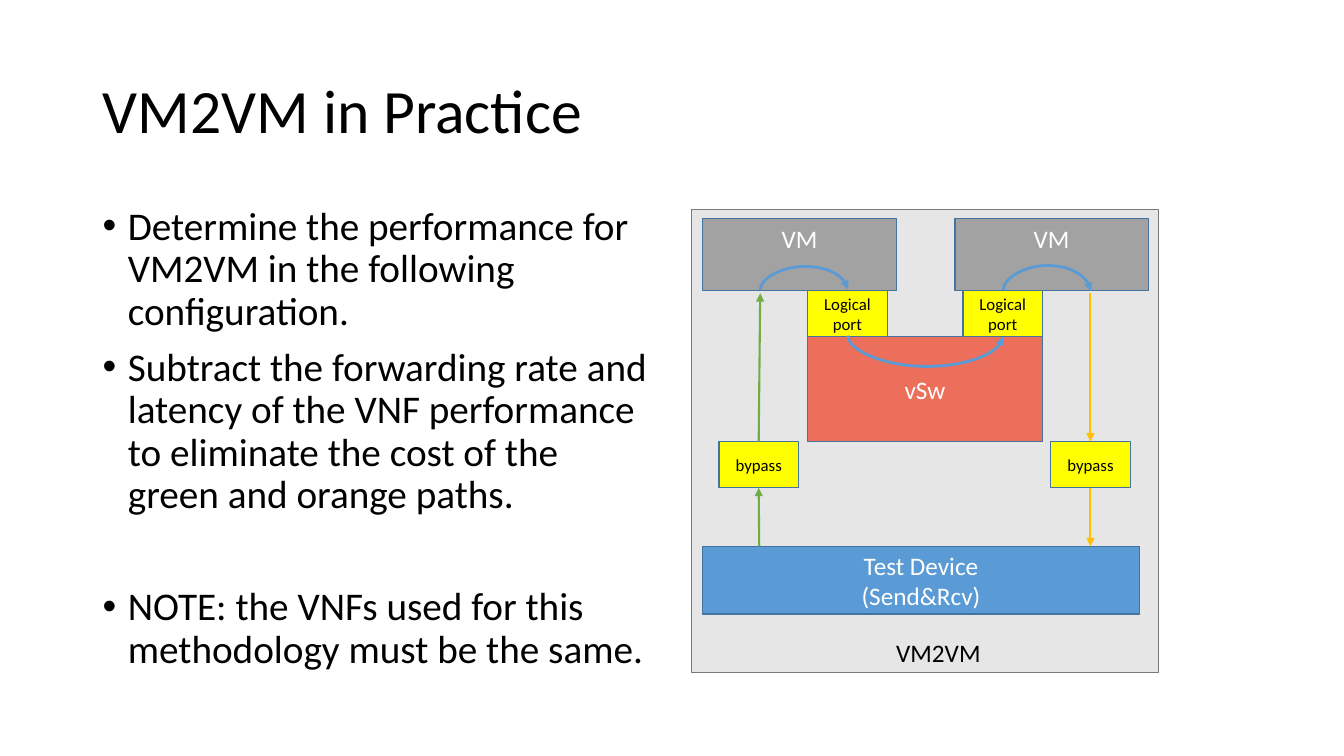
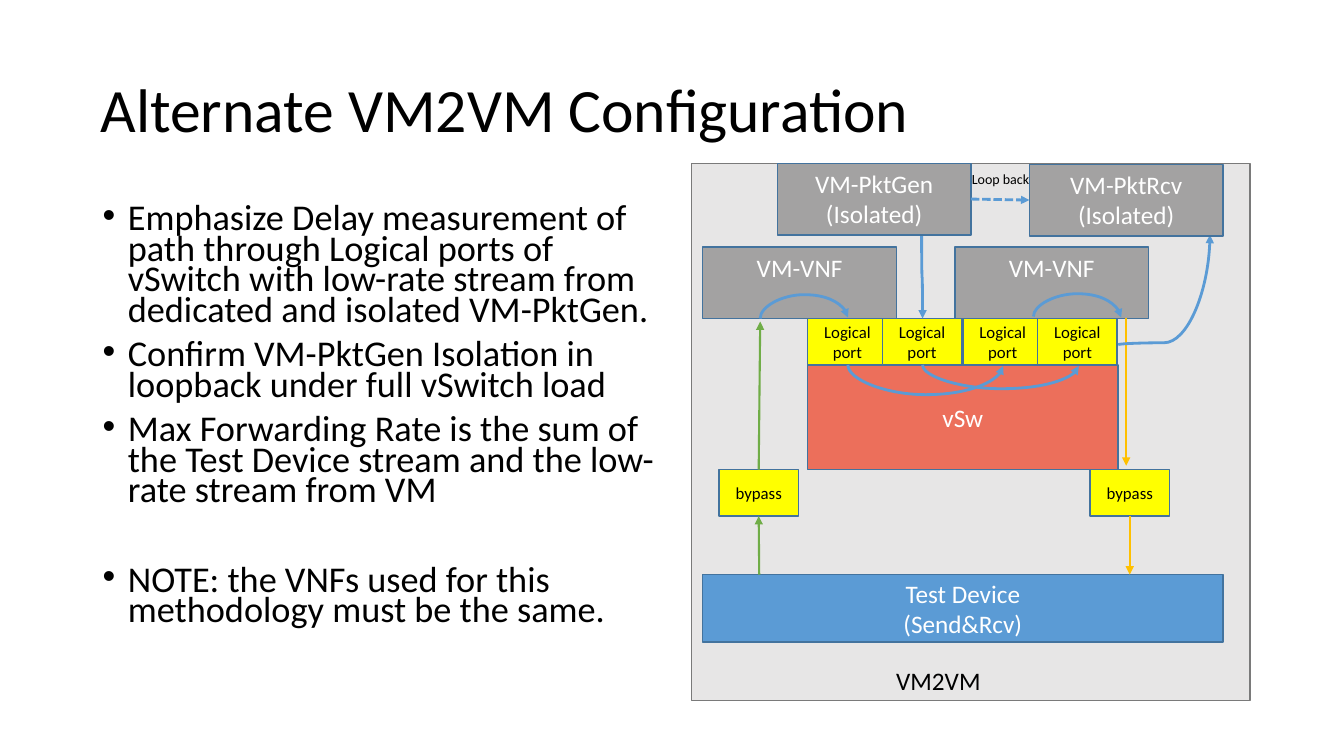
from dataclasses import dataclass
from typing import NamedTuple

from lxml.etree import SubElement
from pptx import Presentation
from pptx.dml.color import RGBColor
from pptx.enum.dml import MSO_LINE
from pptx.enum.shapes import MSO_CONNECTOR, MSO_SHAPE
from pptx.enum.text import MSO_ANCHOR, PP_ALIGN
from pptx.oxml.ns import qn
from pptx.util import Inches, Pt

FONT = "Calibri"
BLACK, WHITE = "000000", "FFFFFF"
PANEL, PANEL_EDGE, EDGE = "E7E6E6", "7A7A7A", "43739E"
GRAY, RED, BLUE, YELLOW = "808080", "F03214", "5B9BD5", "FFFF00"
GREEN, ORANGE = "70AD47", "FFC000"

VM_SIZE = (1.92, 0.71)
TAG_SIZE = (0.79, 0.46)
VM_LEFTS = (6.97, 9.47)
SWITCH_LEFT = 8.01
BYPASS_LEFT = 7.13
GREEN_X = 7.53


class Point(NamedTuple):
    x: float
    y: float


class Joint(NamedTuple):
    shape: object
    site: int


@dataclass(frozen=True)
class Curve:
    start: Point
    end: Point
    bend_y: float


@dataclass(frozen=True)
class Body:
    paragraphs: tuple[str, ...]
    size: float
    line_spacing: float
    note_gap: float


@dataclass(frozen=True)
class TestBed:
    top: float  # top of the VM row; everything below follows from it
    frame: tuple[float, float, float, float]
    vm_label: str
    device_width: float
    switch_width: float
    right_bypass: float
    port_lefts: tuple[float, ...]
    curves: tuple[Curve, ...]
    orange_path: tuple[Point, Point] | None = None


def rgb(value: str) -> RGBColor:
    return RGBColor.from_string(value)


def write_lines(frame, lines, size: float, color: str, align=PP_ALIGN.LEFT) -> None:
    for index, line in enumerate(lines):
        paragraph = frame.paragraphs[0] if index == 0 else frame.add_paragraph()
        paragraph.text = line
        paragraph.alignment = align
        paragraph.font.name = FONT
        paragraph.font.size = Pt(size)
        paragraph.font.color.rgb = rgb(color)


def add_text(slide, box, lines, size: float, anchor=MSO_ANCHOR.TOP, wrap: bool = True):
    frame = slide.shapes.add_textbox(*map(Inches, box)).text_frame
    frame.word_wrap = wrap
    frame.vertical_anchor = anchor
    write_lines(frame, lines, size, BLACK)
    return frame


def add_box(slide, box, fill: str, lines=(), size: float = 18, color: str = WHITE,
            edge: str = EDGE, alpha: int = 100, anchor=MSO_ANCHOR.MIDDLE):
    shape = slide.shapes.add_shape(MSO_SHAPE.RECTANGLE, *map(Inches, box))
    shape.shadow.inherit = False
    shape.fill.solid()
    shape.fill.fore_color.rgb = rgb(fill)
    if alpha < 100:
        fill_color = shape.element.spPr.find(f"{qn('a:solidFill')}/{qn('a:srgbClr')}")
        SubElement(fill_color, qn("a:alpha"), val=str(alpha * 1000))
    shape.line.color.rgb = rgb(edge)
    shape.line.width = Pt(1)
    shape.text_frame.vertical_anchor = anchor
    write_lines(shape.text_frame, lines, size, color, PP_ALIGN.CENTER)
    return shape


def add_vm(slide, left: float, top: float, *lines: str):
    return add_box(slide, (left, top, *VM_SIZE), GRAY, lines, alpha=66,
                   anchor=MSO_ANCHOR.TOP)


def add_tag(slide, left: float, top: float, *lines: str):
    return add_box(slide, (left, top, *TAG_SIZE), YELLOW, lines, 12, BLACK)


def style_arrow(connector, color: str, width: float, dashed: bool = False) -> None:
    connector.line.color.rgb = rgb(color)
    connector.line.width = Pt(width)
    if dashed:
        connector.line.dash_style = MSO_LINE.SQUARE_DOT
    SubElement(connector.get_or_add_ln(), qn("a:tailEnd"), type="triangle")
    SubElement(connector.element.spPr, qn("a:effectLst"))


def add_arrow(slide, start: Point | Joint, end: Point | Joint, color: str,
              width: float = 1.5, dashed: bool = False) -> None:
    places = [end_point if isinstance(end_point, Point) else Point(0, 0)
              for end_point in (start, end)]
    connector = slide.shapes.add_connector(
        MSO_CONNECTOR.STRAIGHT, *(Inches(value) for place in places for value in place))
    if isinstance(start, Joint):
        connector.begin_connect(*start)
    if isinstance(end, Joint):
        connector.end_connect(*end)
    style_arrow(connector, color, width, dashed)


def add_curve(slide, curve: Curve) -> None:
    """Draw a quarter-turned curve that leaves and arrives vertically."""
    start, end = curve.start, curve.end
    span, drop = end.x - start.x, end.y - start.y
    width = abs(drop)
    left = (start.x + end.x - width) / 2
    top = (start.y + end.y - span) / 2
    connector = slide.shapes.add_connector(
        MSO_CONNECTOR.CURVE, Inches(left), Inches(top),
        Inches(left + width), Inches(top + span))
    properties = connector.element.spPr
    rising = drop < 0
    properties.xfrm.set("rot", str((90 if rising else 270) * 60000))
    properties.xfrm.set("flipH", "1")
    if rising:
        properties.xfrm.set("flipV", "1")
    adjustments = properties.find(qn("a:prstGeom")).get_or_add_avLst()
    bend = round((curve.bend_y - start.y) / drop * 100000)
    SubElement(adjustments, qn("a:gd"), name="adj1", fmla=f"val {bend}")
    style_arrow(connector, BLUE, 2)


def add_title(slide, title: str, left: float, top: float) -> None:
    frame = add_text(slide, (left, top, 11.5, 1.45), [title], 44, MSO_ANCHOR.MIDDLE)
    frame.paragraphs[0].line_spacing = 0.9


def add_body(slide, body: Body) -> None:
    frame = add_text(slide, (0.92, 2, 5.67, 4.76), body.paragraphs, body.size)
    for paragraph in frame.paragraphs:
        paragraph.line_spacing = body.line_spacing
        paragraph.space_before = Pt(10)
        properties = paragraph._p.get_or_add_pPr()
        properties.set("marL", str(Inches(0.25)))
        properties.set("indent", str(Inches(-0.25)))
        SubElement(properties, qn("a:buFont"), typeface="Arial")
        SubElement(properties, qn("a:buChar"), char="•")
    frame.paragraphs[-1].space_before = Pt(body.note_gap)


def add_test_bed(slide, bed: TestBed) -> None:
    port_top = bed.top + 0.71
    switch_top = port_top + TAG_SIZE[1]
    bypass_top = switch_top + 1.04
    device_top = bypass_top + 1.04

    # Frame, machines, device and switch
    add_box(slide, bed.frame, PANEL, edge=PANEL_EDGE)
    for left in VM_LEFTS:
        add_vm(slide, left, bed.top, bed.vm_label)
    add_box(slide, (VM_LEFTS[0], device_top, bed.device_width, 0.67), BLUE,
            ("Test Device", "(Send&Rcv)"))
    add_box(slide, (SWITCH_LEFT, switch_top, bed.switch_width, 1.04), RED, ("vSw",),
            alpha=66)

    # Bypass paths: green up, orange down
    left_bypass, right_bypass = (add_tag(slide, left, bypass_top, "bypass")
                                 for left in (BYPASS_LEFT, bed.right_bypass))
    orange_x = bed.right_bypass + TAG_SIZE[0] / 2
    add_arrow(slide, Point(GREEN_X, device_top), Joint(left_bypass, 2), GREEN)
    add_arrow(slide, Joint(left_bypass, 0), Point(GREEN_X + 0.01, port_top + 0.03), GREEN)
    add_arrow(slide, Joint(right_bypass, 2), Point(orange_x, device_top), ORANGE)
    orange_path = bed.orange_path or (Point(orange_x, port_top + 0.03),
                                      Joint(right_bypass, 0))
    add_arrow(slide, *orange_path, ORANGE)

    # Logical ports, blue curves and caption
    for left in bed.port_lefts:
        add_tag(slide, left, port_top, "Logical", "port")
    for curve in bed.curves:
        add_curve(slide, curve)
    add_text(slide, (8.79, device_top + 0.85, 1.16, 0.4), ["VM2VM"], 18)


def add_isolated_pair(slide) -> None:
    generator = add_vm(slide, 7.71, 1.62, "VM-PktGen", "(Isolated)")
    receiver = add_vm(slide, 10.21, 1.63, "VM-PktRcv", "(Isolated)")
    add_arrow(slide, Joint(generator, 3), Joint(receiver, 1), BLUE, 2, dashed=True)
    add_text(slide, (9.54, 1.64, 0.78, 0.27), ["Loop back"], 10, wrap=False)


NOTE = "NOTE: the VNFs used for this methodology must be the same."

PRACTICE_BODY = Body((
    "Determine the performance for VM2VM in the following configuration.",
    "Subtract the forwarding rate and latency of the VNF performance to eliminate "
    "the cost of the green and orange paths.",
    NOTE), 28, 0.9, 50)

ALTERNATE_BODY = Body((
    "Emphasize Delay measurement of path through Logical ports of vSwitch with "
    "low-rate stream from dedicated and isolated VM-PktGen.",
    "Confirm VM-PktGen Isolation in loopback under full vSwitch load",
    "Max Forwarding Rate is the sum of the Test Device stream and the low-rate "
    "stream from VM",
    NOTE), 25.9, 0.7, 42)

PRACTICE_BED = TestBed(
    top=2.17, frame=(6.86, 2.08, 4.63, 4.59), vm_label="VM",
    device_width=4.33, switch_width=2.33, right_bypass=10.42,
    port_lefts=(8.01, 9.55),
    curves=(Curve(Point(7.54, 2.88), Point(8.41, 2.87), 2.64),
            Curve(Point(9.95, 2.88), Point(10.82, 2.89), 2.63),
            Curve(Point(8.41, 3.33), Point(9.95, 3.34), 3.64)))

ALTERNATE_BED = TestBed(
    top=2.45, frame=(6.86, 1.62, 5.54, 5.33), vm_label="VM-VNF",
    device_width=5.16, switch_width=3.08, right_bypass=10.81,
    port_lefts=(8.01, 9.55, 8.75, 10.29),
    curves=(Curve(Point(7.54, 3.16), Point(8.41, 3.15), 2.92),
            Curve(Point(10.25, 3.14), Point(11.12, 3.15), 2.91),
            Curve(Point(8.41, 3.62), Point(9.95, 3.63), 3.92),
            Curve(Point(9.15, 3.62), Point(10.7, 3.63), 3.86),
            Curve(Point(9.14, 2.33), Point(9.15, 3.16), 2.75),
            Curve(Point(11.09, 3.42), Point(12, 2.33), 3.4)),
    orange_path=(Point(11.17, 3.15), Point(11.17, 4.62)))


def main() -> None:
    presentation = Presentation()
    presentation.slide_width = Inches(13.33)
    presentation.slide_height = Inches(7.5)
    blank = presentation.slide_layouts[6]

    # Basic configuration
    slide = presentation.slides.add_slide(blank)
    add_title(slide, "VM2VM in Practice", 0.92, 0.4)
    add_body(slide, PRACTICE_BODY)
    add_test_bed(slide, PRACTICE_BED)

    # Configuration with an isolated generator and receiver
    slide = presentation.slides.add_slide(blank)
    add_title(slide, "Alternate VM2VM Configuration", 0.9, 0.39)
    add_body(slide, ALTERNATE_BODY)
    add_test_bed(slide, ALTERNATE_BED)
    add_isolated_pair(slide)

    presentation.save("out.pptx")


if __name__ == "__main__":
    main()
